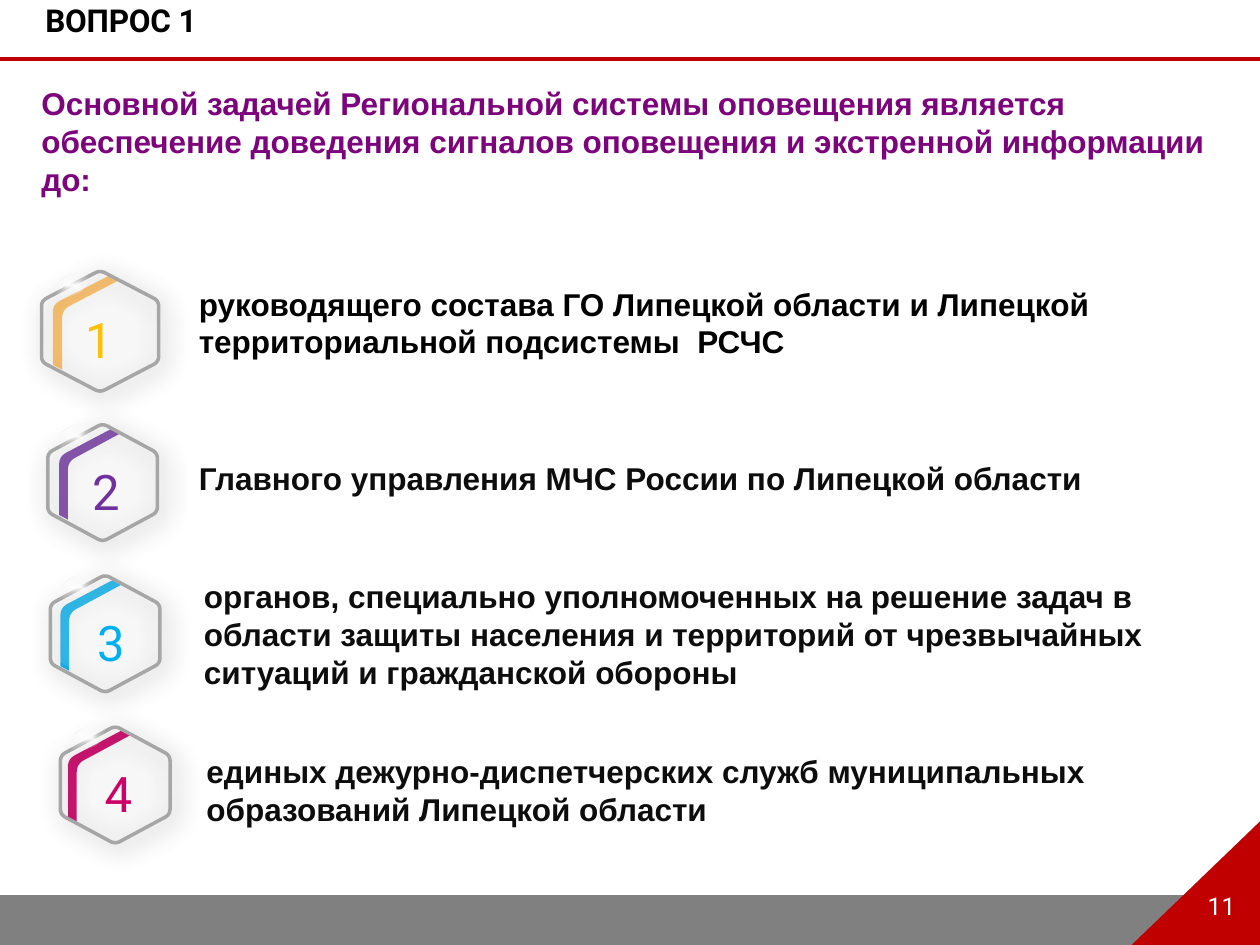
from lxml.etree import SubElement
from pptx import Presentation
from pptx.dml.color import RGBColor
from pptx.enum.shapes import MSO_CONNECTOR, MSO_SHAPE
from pptx.enum.text import MSO_AUTO_SIZE, PP_ALIGN
from pptx.oxml import parse_xml
from pptx.oxml.ns import nsdecls, qn
from pptx.util import Emu, Inches, Pt

COLS, ROWS = 100, 75
WHITE = RGBColor(0xFF, 0xFF, 0xFF)
BLACK = RGBColor(0x00, 0x00, 0x00)
INK = RGBColor(0x0D, 0x0D, 0x0D)
RED = RGBColor(0xC0, 0x00, 0x00)
GREY = RGBColor(0x80, 0x80, 0x80)
FRAME = RGBColor(0xA6, 0xA6, 0xA6)
PLUM = RGBColor(0x7D, 0x03, 0x7D)
APRICOT = RGBColor(0xFF, 0xB8, 0x50)
AMBER = RGBColor(0xFF, 0xC0, 0x00)
VIOLET = RGBColor(0x70, 0x30, 0xA0)
SKY = RGBColor(0x00, 0xB0, 0xF0)
PINK = RGBColor(0xCC, 0x00, 0x66)

FIRST_ROW, ROW_STEP = 26.3, 12
HEXAGON = [(0, -0.51, 0.5), (0.5, -0.255, 0.5), (0.5, 0.255, 0.5),
           (0, 0.51, 0.5), (-0.5, 0.255, 0.5), (-0.5, -0.255, 0.5)]
STRIPE = [(0.49, -0.47, 0), (0.57, -0.43, 0), (0.08, -0.18, 0.7),
          (0.08, 0.32, 0), (0, 0.28, 0), (0, -0.225, 0.7)]
GLOSS_STOPS = [(0, 100), (35, 30), (72, 2), (100, 0)]

BADGES = [
    dict(col=7.95, size=(9.3, 9.5), stripe=4.2, gloss=(0.1, 0.05), label=7.85,
         stripe_color=APRICOT, color=AMBER),
    dict(col=8.15, size=(8.7, 9.2), stripe=4.7, gloss=(0.1, 0.1), label=8.4,
         stripe_color=VIOLET, color=VIOLET),
    dict(col=8.35, size=(8.7, 9.2), stripe=4.8, gloss=(0.2, -0.4), label=8.8,
         stripe_color=SKY, color=SKY),
    dict(col=9.15, size=(8.7, 9.2), stripe=5.4, gloss=(3.55, 1.5), label=9.4,
         stripe_color=PINK, color=PINK),
]
RECIPIENTS = [
    ("руководящего состава ГО Липецкой области и Липецкой территориальной "
     "подсистемы  РСЧС", (14.8, 22.1, 84.7, 7.1), BLACK),
    ("Главного управления МЧС России по Липецкой области",
     (14.8, 35.9, 83.6, 4), INK),
    ("органов, специально уполномоченных на решение задач в области защиты "
     "населения и территорий от чрезвычайных ситуаций и гражданской обороны",
     (15.2, 45.3, 84.8, 10.1), INK),
    ("единых дежурно-диспетчерских служб муниципальных образований "
     "Липецкой области", (15.4, 59.2, 84.5, 7.1), INK),
]


def grid(n):
    """Turn a number of grid cells into a length."""
    return Inches(n / 10)


def set_alpha(s, percent):
    """Make a solid fill partly transparent."""
    clr = s.fill._xPr.find(qn("a:solidFill"))[0]
    SubElement(clr, qn("a:alpha"), val=str(percent * 1000))


def add_text(slide, text, box, *, size=18, font="Arial", color=INK, bold=False,
             align=PP_ALIGN.LEFT, margins=(1, 0.5), spacing=None, track=0):
    """Add a wrapped text box with one formatted run."""
    s = slide.shapes.add_textbox(*map(grid, box))
    tf = s.text_frame
    tf.word_wrap = True
    tf.auto_size = MSO_AUTO_SIZE.SHAPE_TO_FIT_TEXT
    tf.margin_left = tf.margin_right = grid(margins[0])
    tf.margin_top = tf.margin_bottom = grid(margins[1])
    p = tf.paragraphs[0]
    p.alignment = align
    p.line_spacing = spacing
    r = p.add_run()
    r.text = text
    r.font.size, r.font.name, r.font.bold = Pt(size), font, bold
    r.font.color.rgb = color
    if track:
        r._r.get_or_add_rPr().set("spc", str(track))


def rounded(corners, radius=0.9, steps=6):
    """Return outline points with each (x, y, cut share) corner curved."""
    points = []
    for i, (x, y, share) in enumerate(corners):
        ends = []
        for nx, ny, _ in (corners[i - 1], corners[(i + 1) % len(corners)]):
            length = ((nx - x) ** 2 + (ny - y) ** 2) ** 0.5
            cut = radius * share / length
            ends.append((x + (nx - x) * cut, y + (ny - y) * cut))
        (ax, ay), (bx, by) = ends
        for t in [k / steps for k in range(steps + 1)] if share else [0]:
            u = 1 - t
            points.append((u * u * ax + 2 * u * t * x + t * t * bx,
                           u * u * ay + 2 * u * t * y + t * t * by))
    return points


def add_outline(slide, points, color, alpha=None):
    """Add a closed filled outline from points in grid cells."""
    pts = [(grid(x), grid(y)) for x, y in points]
    builder = slide.shapes.build_freeform(*pts[0])
    builder.add_line_segments(pts[1:], close=True)
    s = builder.convert_to_shape()
    s.shadow.inherit = False
    s.fill.solid()
    s.fill.fore_color.rgb = color
    s.line.fill.background()
    if alpha is not None:
        set_alpha(s, alpha)
    return s


def place(corners, x, y, size):
    """Scale unit corners to a size, move them and round them."""
    w, h = size
    return rounded([(x + cx * w, y + cy * h, c) for cx, cy, c in corners])


def add_frame(slide, points):
    """Add the grey badge frame with its soft shadow."""
    s = add_outline(slide, points, WHITE, alpha=8)
    s.line.color.rgb = FRAME
    s.line.width = Pt(2)
    effects = s._element.spPr.find(qn("a:effectLst"))
    effects.append(parse_xml(
        f'<a:outerShdw {nsdecls("a")} blurRad="{Pt(15)}" dist="{Pt(4)}" '
        'dir="2700000" algn="tl" rotWithShape="0"><a:srgbClr val="000000">'
        '<a:alpha val="40000"/></a:srgbClr></a:outerShdw>'))


def add_glint(slide, x, y):
    """Add a tilted ellipse that fades from white to clear."""
    s = slide.shapes.add_shape(MSO_SHAPE.OVAL, *map(grid, (x - 1.5, y - 0.8, 3, 1.6)))
    s.rotation = 333.3
    s.shadow.inherit = False
    s.line.fill.background()
    stops = "".join(
        f'<a:gs pos="{pos * 1000}"><a:srgbClr val="{WHITE}">'
        f'<a:alpha val="{alpha * 1000}"/></a:srgbClr></a:gs>'
        for pos, alpha in GLOSS_STOPS)
    s._element.spPr.find(qn("a:prstGeom")).addnext(parse_xml(
        f'<a:gradFill {nsdecls("a")}><a:gsLst>{stops}</a:gsLst>'
        '<a:path path="shape"><a:fillToRect l="50000" t="50000" r="50000" '
        'b="50000"/></a:path></a:gradFill>'))


def add_badge(slide, number, col, size, stripe, gloss, label, stripe_color, color):
    """Add one numbered hexagon badge."""
    row = FIRST_ROW + (number - 1) * ROW_STEP
    add_outline(slide, place(STRIPE, stripe, row, size), stripe_color)
    add_outline(slide, place(HEXAGON, col + gloss[0], row + gloss[1], size),
                WHITE, alpha=13)
    add_frame(slide, place(HEXAGON, col, row, size))
    add_text(slide, str(number), (label - 2.6, row - 2.2, 5.2, 5.7), size=28,
             font="Roboto", color=color, align=PP_ALIGN.CENTER)
    add_glint(slide, col - 2.2, row - 3.7)


def add_rule(slide, row):
    """Add the red line across the slide."""
    s = slide.shapes.add_connector(MSO_CONNECTOR.STRAIGHT, Emu(0), grid(row),
                                   grid(COLS), grid(row))
    s.line.color.rgb = RED
    s.line.width = Pt(2.34)
    SubElement(s._element.spPr, qn("a:effectLst"))


def main():
    """Build the slide and save it."""
    prs = Presentation()
    prs.slide_width, prs.slide_height = grid(COLS), grid(ROWS)
    slide = prs.slides.add_slide(prs.slide_layouts[6])
    add_outline(slide, [(0, 71), (COLS, 71), (COLS, 75.3), (0, 75.3)], GREY)
    add_rule(slide, 4.7)
    add_outline(slide, [(100.1, 65.1), (89.5, 75.3), (100.1, 75.3)], RED)
    add_text(slide, "11", (94.2, 71.1, 5.5, 2), size=14, font="Roboto", color=WHITE,
             align=PP_ALIGN.CENTER, margins=(0, 0), spacing=Pt(13.9), track=10)
    add_text(slide, "Основной задачей Региональной системы оповещения является "
             "обеспечение доведения сигналов оповещения и экстренной информации до:",
             (2.3, 6.2, 95.7, 10.1), color=PLUM, bold=True)
    for number, badge in enumerate(BADGES, 1):
        add_badge(slide, number, **badge)
    for text, box, color in RECIPIENTS:
        add_text(slide, text, box, color=color, bold=True)
    add_text(slide, "ВОПРОС 1", (2.3, 0, 32.6, 3.1), font="Roboto", color=BLACK,
             bold=True, margins=(1.3, 0.1), track=-10)
    prs.save("out.pptx")


if __name__ == "__main__":
    main()
